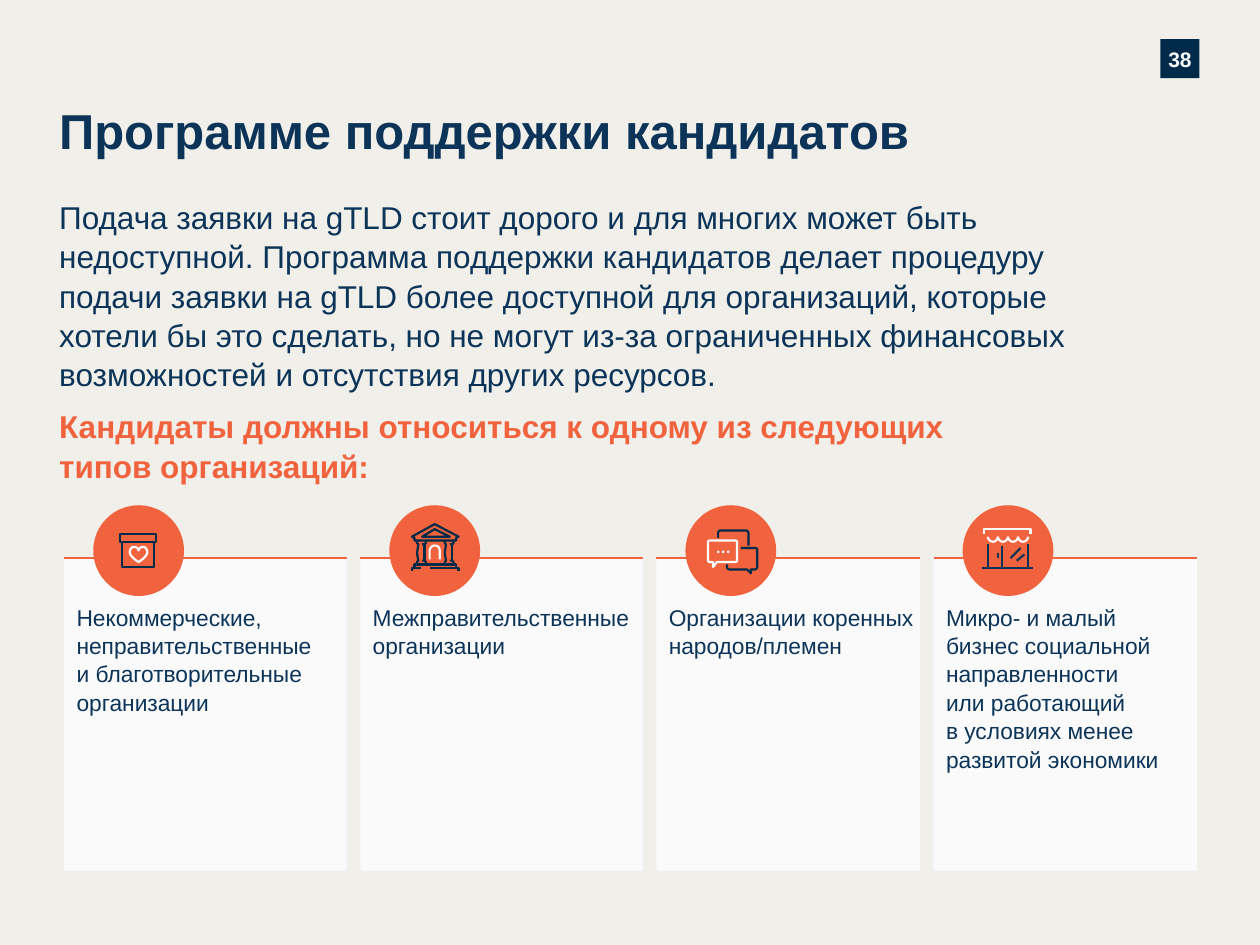
from pptx import Presentation
from pptx.dml.color import RGBColor
from pptx.enum.shapes import MSO_CONNECTOR, MSO_SHAPE
from pptx.enum.text import MSO_ANCHOR, PP_ALIGN
from pptx.oxml.ns import qn
from pptx.util import Pt
from lxml import etree

RECT, OVAL = MSO_SHAPE.RECTANGLE, MSO_SHAPE.OVAL
STRAIGHT = MSO_CONNECTOR.STRAIGHT
TOP, MIDDLE = MSO_ANCHOR.TOP, MSO_ANCHOR.MIDDLE
LEFT, CENTER = PP_ALIGN.LEFT, PP_ALIGN.CENTER
SCALE = 9144
NAVY, DARK, ORANGE, LIGHT, WHITE = "0B3458", "002B49", "F1633E", "FAFAFA", "FFFFFF"


def px(n):
    return round(n * SCALE)


def paint(code):
    return RGBColor.from_string(code)


def bend(start, curve, steps=8):
    x, y = start
    a, b, c, d, e, f = curve
    for i in range(1, steps + 1):
        t = i / steps
        u = 1 - t
        w = u**3, 3 * u * u * t, 3 * u * t * t, t**3
        yield (w[0] * x + w[1] * a + w[2] * c + w[3] * e,
               w[0] * y + w[1] * b + w[2] * d + w[3] * f)


class Deck:
    """Holds the style and the current slide and draws each kind of element."""

    font = "Arial"
    width = 1.25

    def __init__(self, wide, high, back):
        self.prs = Presentation()
        self.prs.slide_width, self.prs.slide_height = px(wide), px(high)
        self.slide = self.prs.slides.add_slide(self.prs.slide_layouts[6])
        self.shapes = self.slide.shapes
        self.slide.background.fill.solid()
        self.slide.background.fill.fore_color.rgb = paint(back)

    def shape(self, kind, x, y, w, h, fill):
        item = self.shapes.add_shape(kind, px(x), px(y), px(w), px(h))
        item.shadow.inherit = False
        item.fill.solid()
        item.fill.fore_color.rgb = paint(fill)
        item.line.fill.background()
        return item

    def label(self, item, paras, size, color, bold=False, inset=(0, 0, 0, 0),
              align=LEFT, anchor=TOP):
        frame = item.text_frame
        frame.word_wrap = True
        frame.vertical_anchor = anchor
        (frame.margin_left, frame.margin_top, frame.margin_right,
         frame.margin_bottom) = map(px, inset)
        for i, text in enumerate(paras):
            para = frame.add_paragraph() if i else frame.paragraphs[0]
            para.alignment, para.line_spacing = align, 1.04
            for j, part in enumerate(text.split("\n")):
                if j:
                    para.add_line_break()
                run = para.add_run()
                run.text = part
                run.font.name, run.font.size = self.font, Pt(size)
                run.font.bold, run.font.color.rgb = bold, paint(color)

    def text(self, x, y, w, h, words, size, color, bold=False, anchor=TOP):
        box = self.shapes.add_textbox(px(x), px(y), px(w), px(h))
        self.label(box, [words], size, color, bold, anchor=anchor)

    def line(self, x, y, to_x, to_y, color):
        item = self.shapes.add_connector(STRAIGHT, px(x), px(y), px(to_x), px(to_y))
        item.line.color.rgb, item.line.width = paint(color), Pt(self.width)
        etree.SubElement(item._element.spPr, qn("a:effectLst"))

    def trace(self, x, y, path, color, close=False):
        """Draws an outline of points (two numbers) and curves (six numbers)."""
        dots = [path[0]]
        for step in path[1:]:
            dots.extend(bend(dots[-1], step) if len(step) == 6 else [step])
        dots = [(px(x + a), px(y + b)) for a, b in dots]
        pen = self.shapes.build_freeform(*dots[0], scale=1.0)
        pen.add_line_segments(dots[1:], close=close)
        item = pen.convert_to_shape()
        item.shadow.inherit = False
        item.fill.background()
        item.line.color.rgb, item.line.width = paint(color), Pt(self.width)


def frame(l, t, r, b):
    return [(l, t), (r, t), (r, b), (l, b)]


def charity(deck, x, y):
    deck.trace(x, y, frame(21, 23, 50, 29), DARK, True)
    deck.trace(x, y, frame(23, 29, 48, 49), DARK, True)
    heart = [(36, 45), (36, 45, 43, 41, 43, 37), (43, 35, 41, 33, 40, 33),
             (37, 33, 36, 35, 36, 36), (36, 35, 35, 33, 32, 33),
             (31, 33, 29, 35, 29, 37), (29, 41, 36, 45, 36, 45)]
    deck.trace(x, y, heart, WHITE, True)


def bank(deck, x, y):
    for path in ([(32, 50), (55, 50), (55, 52)],
                 [(18, 52), (18, 50), (25, 50)],
                 [(20, 50), (20, 47), (53, 47), (53, 50)]):
        deck.trace(x, y, path, DARK)
    for left in (x, x + 22):
        deck.trace(left, y, [(22, 47), (22, 45), (23, 44), (22, 38),
                             (23, 31), (22, 30), (22, 28)], DARK)
        deck.trace(left, y, [(26, 31), (28, 31), (29, 30), (29, 28)], DARK)
        deck.trace(left, y, [(26, 44), (28, 44), (29, 45), (29, 47)], DARK)
        deck.line(left + 28, y + 31, left + 28, y + 44, DARK)
    deck.trace(x, y, [(32, 43), (32, 36), (32, 34, 34, 32, 36, 32),
                      (39, 32, 40, 34, 40, 36), (40, 43)], LIGHT)
    deck.trace(x, y, [(36, 19), (26, 25), (48, 25)], DARK, True)
    deck.trace(x, y, [(53, 28), (20, 28), (20, 26), (18, 25), (36, 15),
                      (55, 25), (53, 26)], DARK, True)


def chat(deck, x, y):
    deck.trace(x, y, [(40, 28), (19, 28), (18, 28, 18, 29, 18, 30), (18, 43),
                      (18, 44, 18, 45, 19, 45), (22, 45), (22, 49), (25, 45),
                      (40, 45), (41, 45, 41, 44, 41, 43), (41, 30),
                      (41, 29, 41, 28, 40, 28)], LIGHT, True)
    deck.trace(x, y, [(33, 47), (33, 49), (33, 50, 34, 51, 35, 51), (49, 51),
                      (52, 54), (52, 51), (55, 51), (56, 51, 57, 50, 57, 49),
                      (57, 35), (57, 34, 56, 34, 55, 34), (44, 34)], DARK)
    deck.trace(x, y, [(26, 26), (26, 22), (26, 21, 27, 20, 28, 20), (48, 20),
                      (49, 20, 50, 21, 50, 22), (50, 32)], DARK)
    for left in (25, 29, 33):
        deck.shape(OVAL, x + left, y + 36, 2, 2, LIGHT)


def shop(deck, x, y):
    for a, b, c, d in ((20, 31, 20, 50), (31, 32, 31, 50), (52, 31, 52, 50),
                       (28, 38, 28, 42), (15, 50, 56, 50), (46, 34, 38, 42),
                       (49, 39, 43, 44)):
        deck.line(x + a, y + b, x + c, y + d, NAVY)
    deck.trace(x, y, [(17, 23), (17, 19), (54, 19), (54, 23)], LIGHT)
    for left in range(20, 52, 8):
        deck.trace(x + left, y + 25, [(8, 0), (8, 2, 6, 4, 4, 4),
                                      (2, 4, 0, 2, 0, 0)], LIGHT)


CARDS = [
    (51, 224, charity, ["Некоммерческие,",
                        "неправительственные \nи благотворительные организации"]),
    (286, 224, bank, ["Межправительственные организации"]),
    (521, 209, chat, ["Организации коренных народов/племен"]),
    (741, 209, shop, ["Микро- и малый \nбизнес социальной направленности \n"
                      "или работающий \nв условиях менее развитой экономики"]),
]


def main():
    deck = Deck(1000, 750, "F1EFEA")
    badge = deck.shape(RECT, 921, 31, 31, 31, "002A49")
    deck.label(badge, ["38"], 12, LIGHT, True, align=CENTER, anchor=MIDDLE)
    deck.text(47, 75, 753, 55, "Программе поддержки кандидатов", 28, NAVY, True, MIDDLE)
    deck.text(47, 156, 824, 149,
              "Подача заявки на gTLD стоит дорого и для многих может быть недоступной. "
              "Программа поддержки кандидатов делает процедуру подачи заявки на gTLD "
              "более доступной для организаций, которые хотели бы это сделать, но не "
              "могут из-за ограниченных финансовых возможностей и отсутствия других "
              "ресурсов.", 18, NAVY)
    deck.text(47, 322, 773, 59, "Кандидаты должны относиться к одному из следующих "
              "типов организаций:", 18, ORANGE, True)
    for x, wide, icon, paras in CARDS:
        card = deck.shape(RECT, x, 443, wide, 248, LIGHT)
        deck.label(card, paras, 13, NAVY, inset=(10, 35, 0, 20))
        deck.line(x, 443, x + wide, 443, ORANGE)
        deck.shape(OVAL, x + 23, 401, 72, 72, ORANGE)
        icon(deck, x + 23, 401)
    deck.prs.save("out.pptx")


if __name__ == "__main__":
    main()
